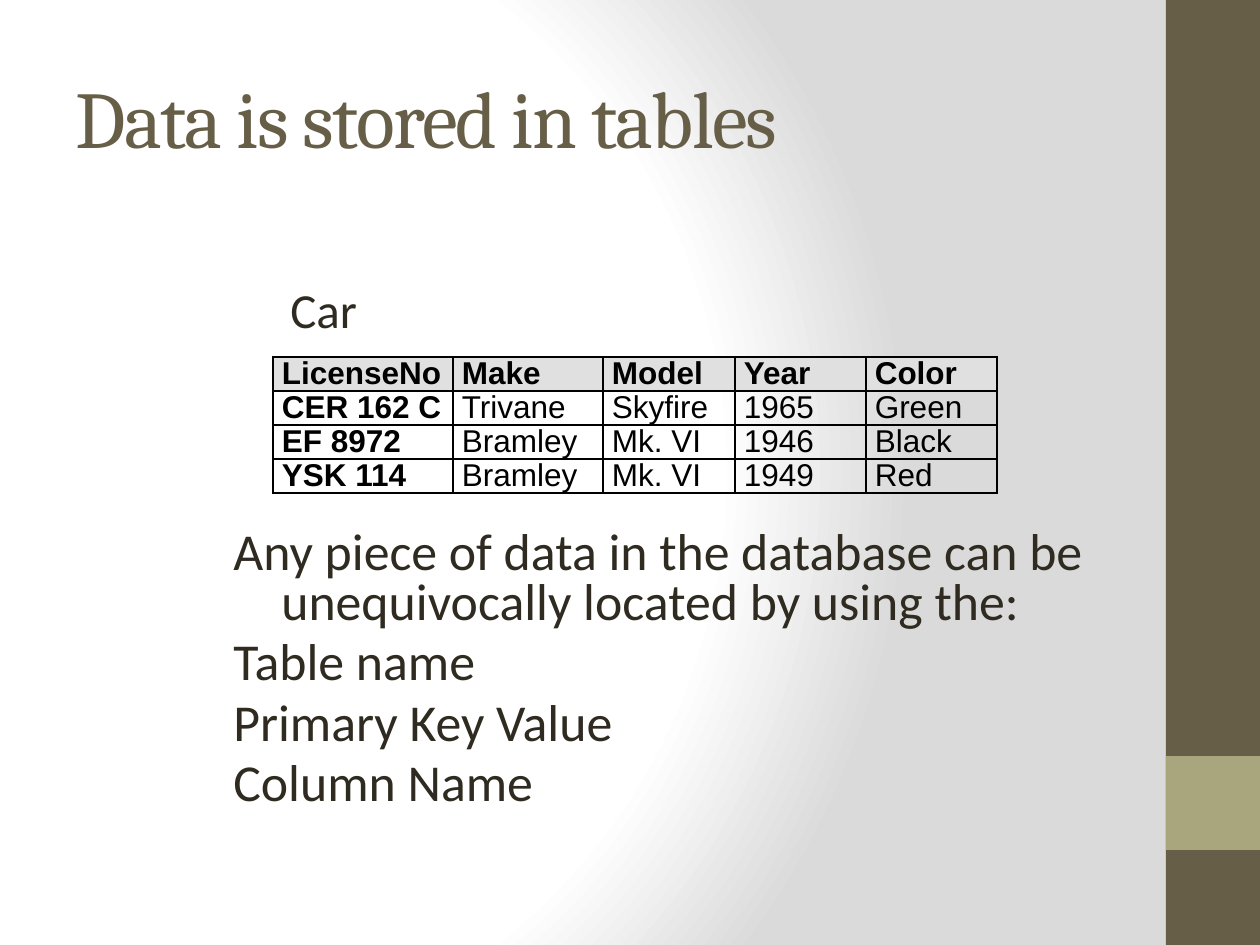
import pptx
import pptx.util
import pptx.dml.color
import pptx.enum.shapes
import pptx.enum.text
import pptx.oxml
import pptx.oxml.ns

# Content
TITLE = "Data is stored in tables"
TABLE_NAME = "Car"
CARS = [
    ("LicenseNo", "Make", "Model", "Year", "Color"),
    ("CER 162 C", "Trivane", "Skyfire", "1965", "Green"),
    ("EF 8972", "Bramley", "Mk. VI", "1946", "Black"),
    ("YSK 114", "Bramley", "Mk. VI", "1949", "Red"),
]
LOCATORS = [
    "Any piece of data in the database can be unequivocally located by using the:",
    "Table name",
    "Primary Key Value",
    "Column Name",
]

# Layout in px
SLIDE_W, SLIDE_H = 1260, 945
SIDEBAR_X = 1166
SIDEBAR_W = SLIDE_W - SIDEBAR_X
ACCENT_Y = 756
TABLE_X, TABLE_Y, ROW_H = 273, 357, 34
COLUMN_WIDTHS = [180, 150, 132, 131, 131]
HANGING = 48

# Colours
BROWN, OLIVE, INK = "675E47", "A9A57C", "2F2B20"
BACKGROUND_STOPS = [(0, "FFFFFF"), (75, "FFFFFF"), (100, "DADADA")]
NS = pptx.oxml.ns.nsdecls("a")


def px(n):
    return pptx.util.Emu(n * 914400 // 126)


def color(value):
    return pptx.dml.color.RGBColor.from_string(value)


def add_run(paragraph, text, size, font, tint, bold=False):
    run = paragraph.add_run()
    run.text = text
    run.font.size = pptx.util.Pt(size)
    run.font.name = font
    run.font.bold = bold
    run.font.color.rgb = color(tint)
    return run


def add_text_frame(slide, *box):
    frame = slide.shapes.add_textbox(*map(px, box)).text_frame
    frame.word_wrap = True
    return frame


def set_indent(paragraph, left, first):
    properties = paragraph._p.get_or_add_pPr()
    properties.set("marL", str(px(left)))
    properties.set("indent", str(px(first)))


def add_bar(slide, top, height, tint):
    bar = slide.shapes.add_shape(
        pptx.enum.shapes.MSO_SHAPE.RECTANGLE,
        px(SIDEBAR_X), px(top), px(SIDEBAR_W), px(height))
    bar.shadow.inherit = False
    bar.fill.solid()
    bar.fill.fore_color.rgb = color(tint)
    bar.line.fill.background()


def set_background(slide):
    fill = slide.background.fill
    fill.solid()
    fill.fore_color.rgb = color("FFFFFF")
    solid = slide._element.cSld.find(".//" + pptx.oxml.ns.qn("a:solidFill"))
    stops = "".join(
        f'<a:gs pos="{at * 1000}"><a:srgbClr val="{tint}"/></a:gs>'
        for at, tint in BACKGROUND_STOPS)
    solid.getparent().replace(solid, pptx.oxml.parse_xml(
        f'<a:gradFill {NS} rotWithShape="1"><a:gsLst>{stops}</a:gsLst>'
        '<a:path path="circle"><a:fillToRect l="20000" t="50000" '
        'r="100000" b="50000"/></a:path></a:gradFill>'))


def add_borders(cell):
    properties = cell._tc.get_or_add_tcPr()
    for index, side in enumerate(("lnL", "lnR", "lnT", "lnB")):
        properties.insert(index, pptx.oxml.parse_xml(
            f'<a:{side} {NS} w="12700"><a:solidFill>'
            f'<a:srgbClr val="000000"/></a:solidFill></a:{side}>'))


def add_car_table(slide):
    table = slide.shapes.add_table(
        len(CARS), len(COLUMN_WIDTHS), px(TABLE_X), px(TABLE_Y),
        px(sum(COLUMN_WIDTHS)), px(ROW_H * len(CARS))).table
    table.horz_banding = False
    for column, width in zip(table.columns, COLUMN_WIDTHS):
        column.width = px(width)
    for r, car in enumerate(CARS):
        table.rows[r].height = px(ROW_H)
        for c, value in enumerate(car):
            cell = table.cell(r, c)
            cell.margin_left = cell.margin_right = px(9)
            cell.margin_top = cell.margin_bottom = 0
            cell.vertical_anchor = pptx.enum.text.MSO_ANCHOR.BOTTOM
            if r == 0:
                cell.fill.solid()
                cell.fill.fore_color.rgb = color("E0E0E0")
            else:
                cell.fill.background()
            add_borders(cell)
            paragraph = cell.text_frame.paragraphs[0]
            paragraph.line_spacing = pptx.util.Pt(12)
            add_run(paragraph, value, 18, "Arial", "000000", r == 0 or c == 0)


def main():
    deck = pptx.Presentation()
    deck.slide_width, deck.slide_height = px(SLIDE_W), px(SLIDE_H)
    slide = deck.slides.add_slide(deck.slide_layouts[5])
    set_background(slide)

    # Sidebar with its accent square
    add_bar(slide, 0, SLIDE_H, BROWN)
    add_bar(slide, ACCENT_Y, SIDEBAR_W, OLIVE)

    # Title
    title = slide.shapes.title
    title.left, title.top, title.width, title.height = map(px, (63, 38, 1050, 157))
    title.text_frame.auto_size = pptx.enum.text.MSO_AUTO_SIZE.NONE
    title.text_frame.vertical_anchor = pptx.enum.text.MSO_ANCHOR.MIDDLE
    heading = title.text_frame.paragraphs[0]
    heading.alignment = pptx.enum.text.PP_ALIGN.LEFT
    heading_run = add_run(heading, TITLE, 46, "Cambria", BROWN)
    heading_run.font._element.set("spc", "-100")

    # Table with its name
    caption = add_text_frame(slide, 262, 273, 147, 95).paragraphs[0]
    set_indent(caption, HANGING, -32)
    add_run(caption, TABLE_NAME, 28, "Calibri", INK)
    add_car_table(slide)

    # What locates a piece of data
    locators = add_text_frame(slide, 221, 525, 935, 325)
    for index, text in enumerate(LOCATORS):
        paragraph = locators.add_paragraph() if index else locators.paragraphs[0]
        set_indent(paragraph, HANGING, -HANGING)
        paragraph.line_spacing = 0.8
        if index:
            paragraph.space_before = pptx.util.Pt(6)
        add_run(paragraph, text, 29.6, "Calibri", INK)

    deck.save("out.pptx")


if __name__ == "__main__":
    main()
